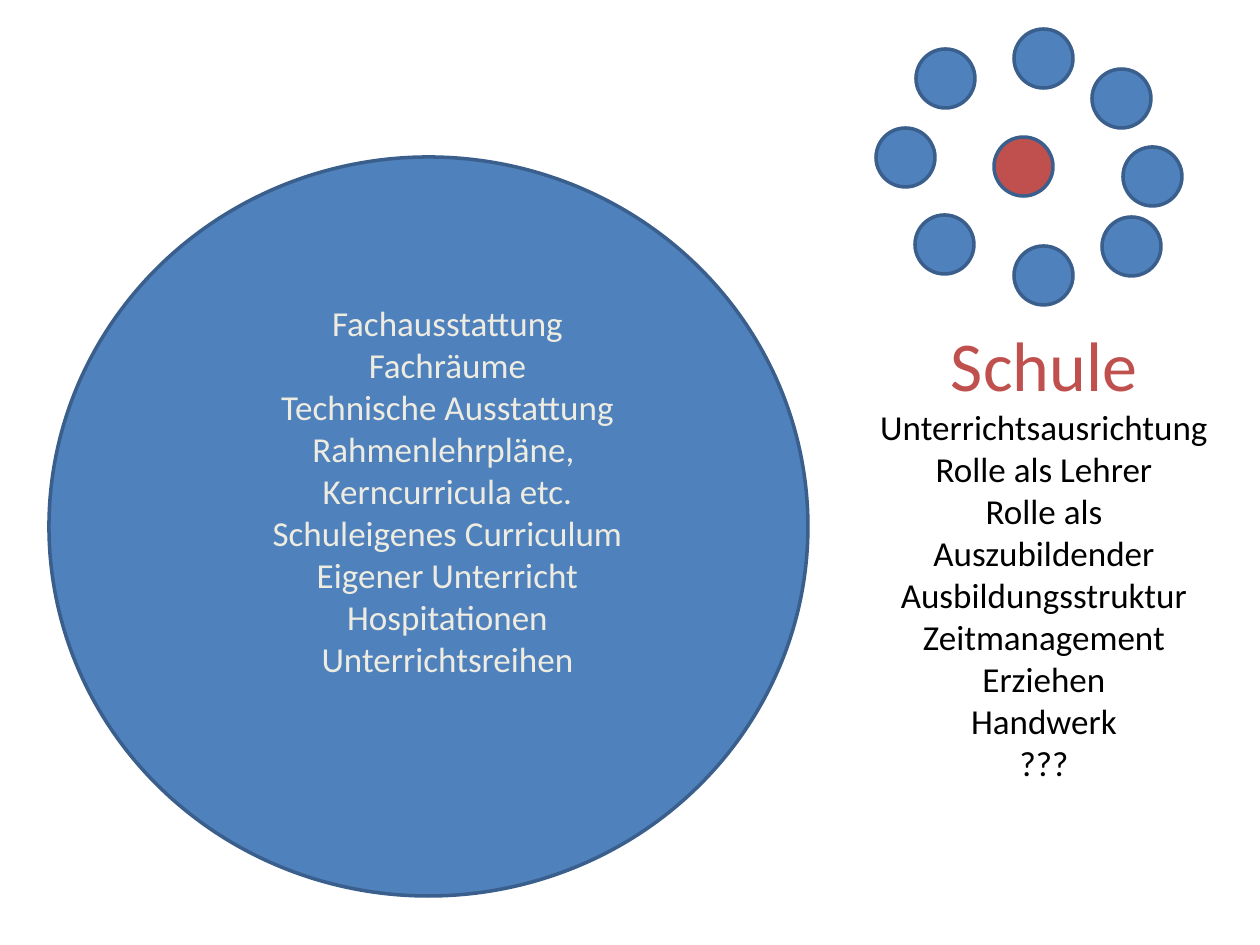
"""Build a slide on school topics, with a large topic circle and a ring of dots."""
from pptx import Presentation
from pptx import util as u
from pptx.dml.color import RGBColor
from pptx.enum import shapes, text

PX = 914400 / 126
FONT = "Calibri"
BLUE = RGBColor(0x4F, 0x81, 0xBD)
DARK_BLUE = RGBColor(0x3A, 0x5F, 0x8C)
RED = RGBColor(0xC0, 0x50, 0x4D)
CREAM = RGBColor(0xEE, 0xEC, 0xE1)
BLACK = RGBColor(0, 0, 0)

DOT = 59
CENTRE_DOT = (994, 137)
RING_DOTS = [(916, 49), (876, 128), (915, 215), (1014, 246),
             (1102, 217), (1123, 147), (1092, 69), (1014, 29)]

SUBJECT_TOPICS = ["Fachausstattung", "Fachräume", "Technische Ausstattung",
                  "Rahmenlehrpläne, ", "Kerncurricula etc.",
                  "Schuleigenes Curriculum", "Eigener Unterricht",
                  "Hospitationen", "Unterrichtsreihen"]
SCHOOL_TOPICS = ["Unterrichtsausrichtung", "Rolle als Lehrer",
                 "Rolle als Auszubildender", "Ausbildungsstruktur",
                 "Zeitmanagement", "Erziehen", "Handwerk", "???"]


def px(*lengths):
    return [u.Emu(round(n * PX)) for n in lengths]


def add_circle(parent, x, y, w, h, fill):
    sp = parent.add_shape(shapes.MSO_SHAPE.OVAL, *px(x, y, w, h))
    sp.shadow.inherit = False
    sp.fill.solid()
    sp.fill.fore_color.rgb = fill
    sp.line.color.rgb = DARK_BLUE
    sp.line.width = u.Pt(2)


def add_lines(s, x, y, w, h, lines):
    tf = s.shapes.add_textbox(*px(x, y, w, h)).text_frame
    tf.word_wrap = True
    tf.auto_size = text.MSO_AUTO_SIZE.SHAPE_TO_FIT_TEXT
    for i, (words, size, color) in enumerate(lines):
        p = tf.add_paragraph() if i else tf.paragraphs[0]
        p.text = words
        p.alignment = text.PP_ALIGN.CENTER
        p.font.name = FONT
        p.font.size = u.Pt(size)
        p.font.color.rgb = color


def add_dot_ring(s):
    group = s.shapes.add_group_shape()
    add_circle(group.shapes, *CENTRE_DOT, DOT, DOT, RED)
    for x, y in RING_DOTS:
        add_circle(group.shapes, x, y, DOT, DOT, BLUE)


def main():
    prs = Presentation()
    prs.slide_width, prs.slide_height = px(1260, 945)
    s = prs.slides.add_slide(prs.slide_layouts[6])
    add_circle(s.shapes, 49, 157, 759, 739, BLUE)
    add_lines(s, 59, 295, 777, 394, [(t, 20, CREAM) for t in SUBJECT_TOPICS])
    add_lines(s, 867, 315, 354, 518,
              [("Schule", 40, RED)] + [(t, 20, BLACK) for t in SCHOOL_TOPICS])
    add_dot_ring(s)
    prs.save("out.pptx")


if __name__ == "__main__":
    main()
